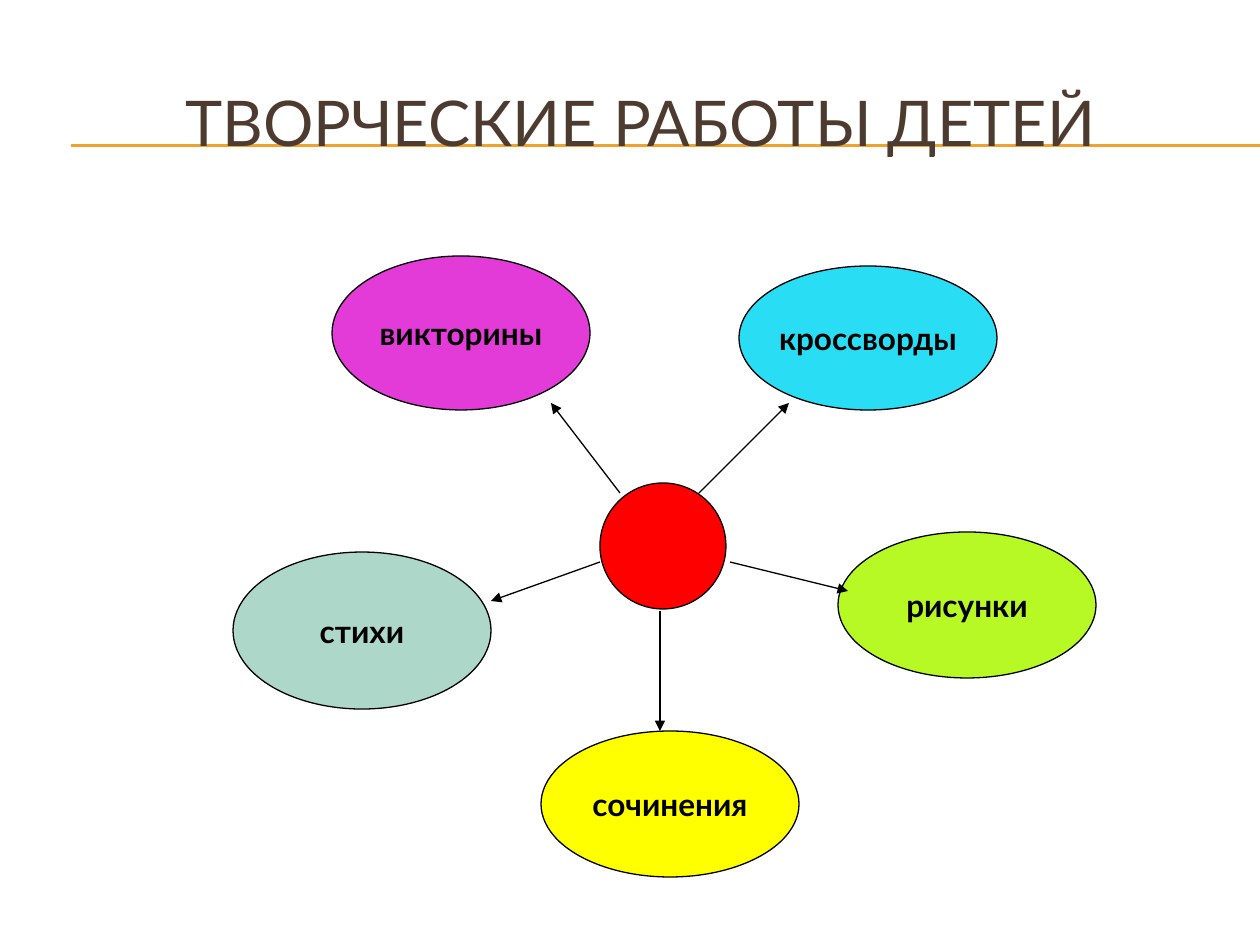
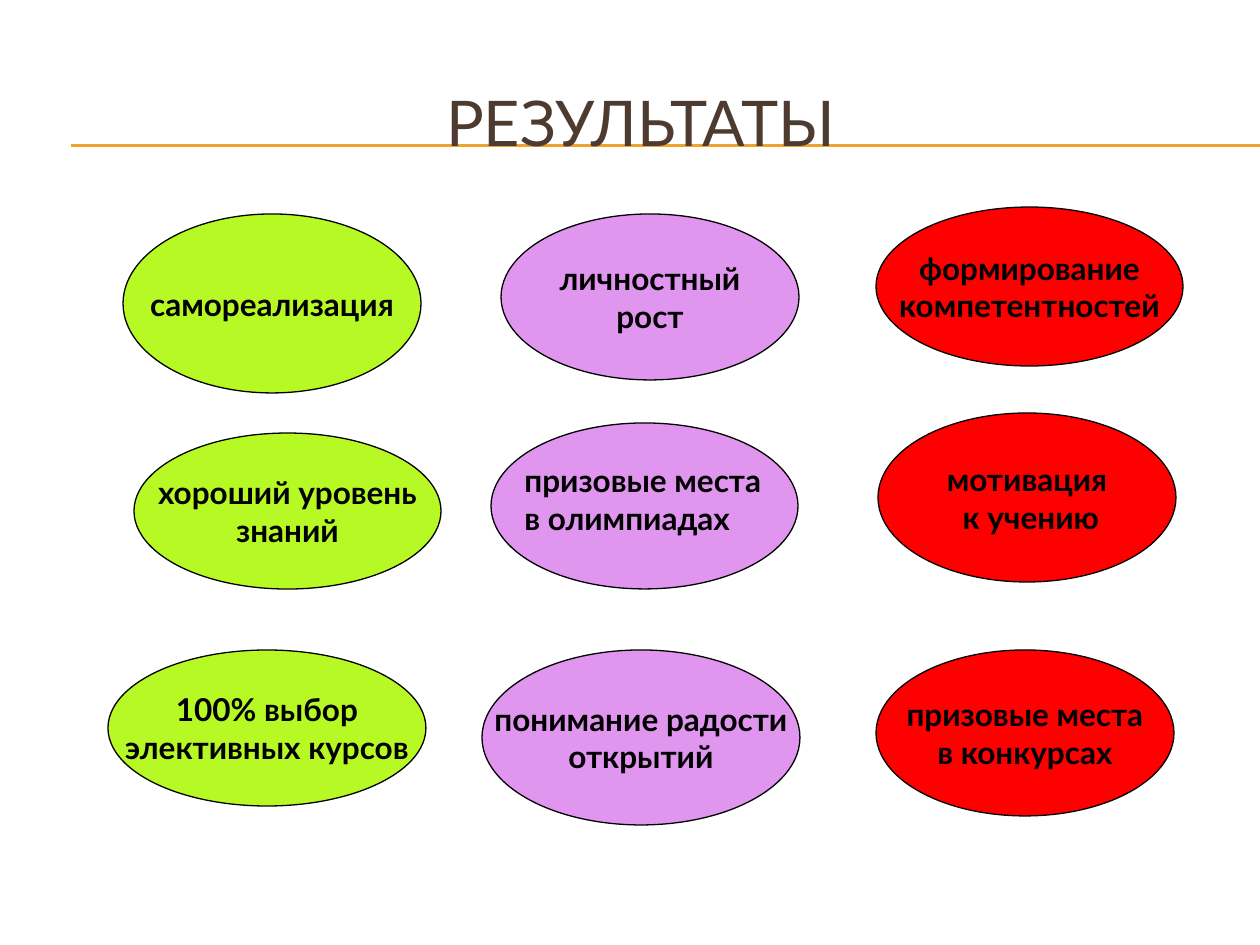
from dataclasses import dataclass

from lxml import etree
from pptx import Presentation
from pptx.dml.color import RGBColor
from pptx.enum.shapes import MSO_CONNECTOR, MSO_SHAPE
from pptx.enum.text import MSO_ANCHOR, MSO_AUTO_SIZE, PP_ALIGN
from pptx.oxml.ns import qn
from pptx.util import Emu, Pt

EMU_PER_PX = 914400 / 126


@dataclass(frozen=True)
class Theme:
    font: str = "Lato"
    title_size: int = 36
    label_size: int = 18
    line_width: float = 0.75
    title: str = "4E3B30"
    rule: str = "F0A22E"
    ink: str = "000000"
    magenta: str = "E33BD7"
    sage: str = "ADD7C9"
    yellow: str = "FFFF00"
    lime: str = "B7F925"
    cyan: str = "29DDF5"
    red: str = "FF0000"
    lilac: str = "E095EF"


THEME = Theme()

CREATIVE_WORKS = [
    ("викторины", THEME.magenta, (332, 256, 258, 154)),
    ("стихи", THEME.sage, (233, 552, 258, 157)),
    ("сочинения", THEME.yellow, (541, 731, 258, 146)),
    ("рисунки", THEME.lime, (838, 532, 258, 146)),
    ("кроссворды", THEME.cyan, (739, 266, 258, 144)),
]
HUB = (600, 483, 126, 126)
SPOKES = [
    ((699, 493), (789, 403)),
    ((620, 493), (551, 403)),
    ((730, 562), (848, 591)),
    ((660, 611), (660, 731)),
    ((600, 562), (491, 601)),
]

RESULTS = {
    THEME.lime: [
        ("самореализация", (123, 214, 298, 179)),
        ("хороший уровень\nзнаний", (134, 433, 307, 156)),
        ("100% выбор\nэлективных курсов", (108, 650, 318, 156)),
    ],
    THEME.lilac: [
        ("личностный\nрост", (501, 214, 298, 166)),
        ("", (491, 423, 307, 166)),
        ("понимание радости\nоткрытий", (482, 650, 318, 175)),
    ],
    THEME.red: [
        ("формирование\nкомпетентностей", (876, 207, 307, 159)),
        ("мотивация\n к учению", (878, 413, 298, 169)),
        ("призовые места\nв конкурсах", (876, 650, 298, 166)),
    ],
}
OLYMPIAD_NOTE = ("призовые места\nв олимпиадах", (512, 455, 334, 88))


def px(*lengths):
    return [Emu(round(n * EMU_PER_PX)) for n in lengths]


def rgb(color):
    return RGBColor.from_string(color)


def write(tf, text, size, color, bold=False, align=None):
    tf.text = text
    for p in tf.paragraphs:
        p.alignment = align
        p.font.name = THEME.font
        p.font.size = Pt(size)
        p.font.bold = bold
        p.font.color.rgb = rgb(color)


def write_label(tf, text, align):
    write(tf, text, THEME.label_size, THEME.ink, bold=True, align=align)


def set_line(line, color):
    line.color.rgb = rgb(color)
    line.width = Pt(THEME.line_width)


def add_line(s, start, end, color):
    line = s.shapes.add_connector(MSO_CONNECTOR.STRAIGHT, *px(*start, *end))
    set_line(line.line, color)
    etree.SubElement(line.element.spPr, qn("a:effectLst"))
    return line


def add_arrow(s, start, end):
    arrow = add_line(s, start, end, THEME.ink)
    ln = arrow.element.spPr.find(qn("a:ln"))
    etree.SubElement(ln, qn("a:tailEnd"), type="triangle")


def add_ellipse(s, box, color, text=""):
    sp = s.shapes.add_shape(MSO_SHAPE.OVAL, *px(*box))
    sp.shadow.inherit = False
    sp.fill.solid()
    sp.fill.fore_color.rgb = rgb(color)
    set_line(sp.line, THEME.ink)
    if text:
        tf = sp.text_frame
        tf.word_wrap = False
        tf.vertical_anchor = MSO_ANCHOR.MIDDLE
        write_label(tf, text, PP_ALIGN.CENTER)


def add_note(s, text, box):
    tf = s.shapes.add_textbox(*px(*box)).text_frame
    tf.word_wrap = True
    tf.auto_size = MSO_AUTO_SIZE.SHAPE_TO_FIT_TEXT
    write_label(tf, text, PP_ALIGN.LEFT)


def place_layout_title(layout):
    title = layout.placeholders[0]
    title.left, title.top, title.width, title.height = px(42, 63, 1197, 116)


def move_rules_to_layout(s):
    """Draw the double rule on a slide and hand it to the shared layout."""
    for y in (145, 146):
        rule = add_line(s, (71, y), (1260, y), THEME.rule)
        s.slide_layout.shapes.element.append(rule.element)


def add_titled_slide(prs, layout, title):
    s = prs.slides.add_slide(layout)
    tf = s.shapes.title.text_frame
    tf.vertical_anchor = MSO_ANCHOR.MIDDLE
    write(tf, title, THEME.title_size, THEME.title, align=PP_ALIGN.CENTER)
    return s


def add_creative_works(prs, layout):
    s = add_titled_slide(prs, layout, "ТВОРЧЕСКИЕ РАБОТЫ ДЕТЕЙ")
    for text, color, box in CREATIVE_WORKS:
        add_ellipse(s, box, color, text)
    add_ellipse(s, HUB, THEME.red)
    for start, end in SPOKES:
        add_arrow(s, start, end)
    return s


def add_results(prs, layout):
    s = add_titled_slide(prs, layout, "РЕЗУЛЬТАТЫ")
    for color, column in RESULTS.items():
        for text, box in column:
            add_ellipse(s, box, color, text)
    add_note(s, *OLYMPIAD_NOTE)


def main():
    prs = Presentation()
    prs.slide_width, prs.slide_height = px(1260, 945)
    layout = prs.slide_layouts.get_by_name("Title Only")
    place_layout_title(layout)
    move_rules_to_layout(add_creative_works(prs, layout))
    add_results(prs, layout)
    prs.save("out.pptx")


if __name__ == "__main__":
    main()
